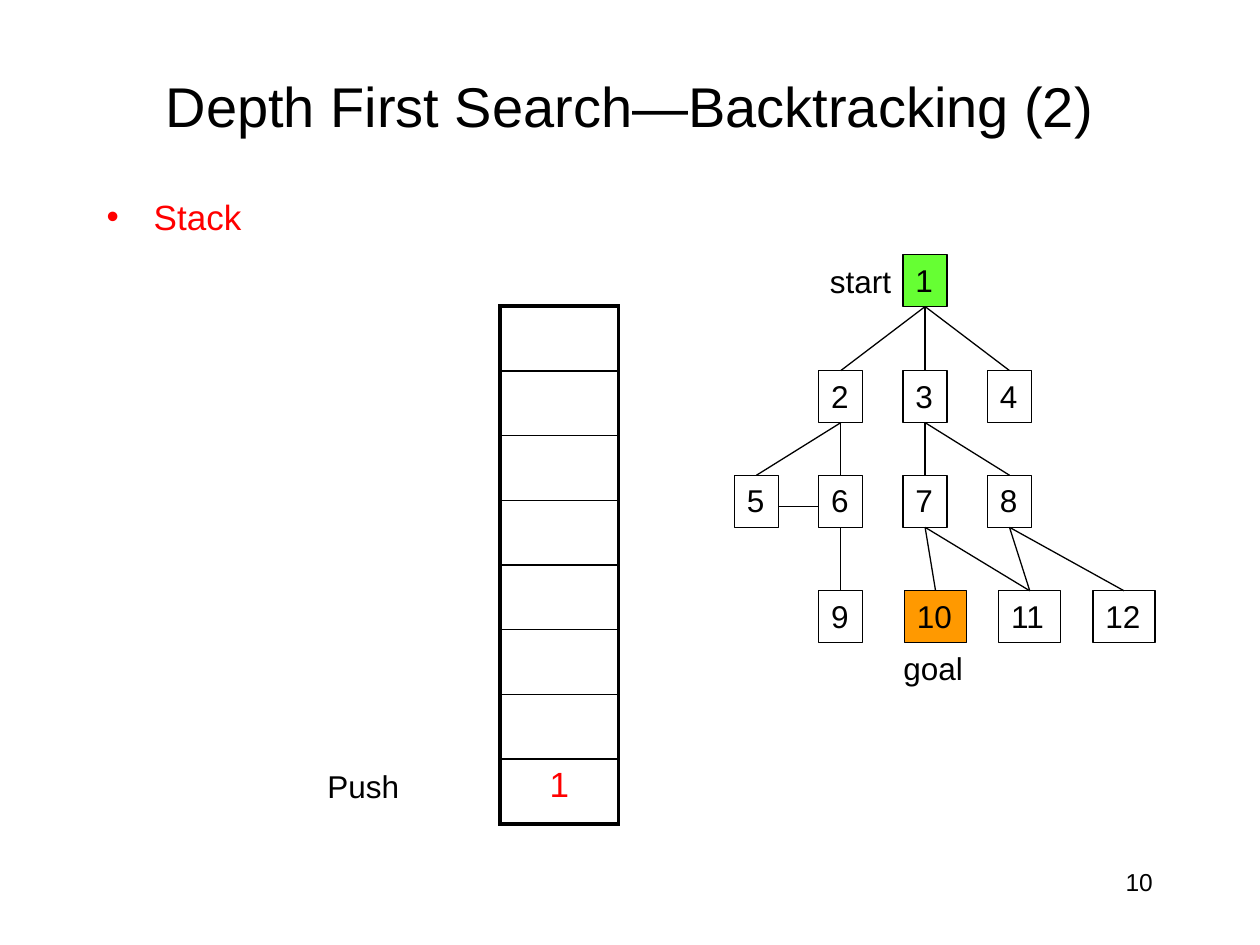
from lxml import etree
from pptx import Presentation
from pptx import util as u
from pptx.dml import color
from pptx.enum import shapes, text
from pptx.oxml import ns

COLORS = {
    "black": "000000",
    "red": "FF0000",
    "start": "66FF33",
    "goal": "FF9900",
}
FONT = "Arial"
NODE_HEIGHT = 1.05
COLUMNS = [15.25 + 1.7 * i for i in range(4)]
LEAVES = [18.86 + 1.9 * i for i in range(3)]
LEVELS = [5.13, 7.47, 9.58, 11.91]
NODES = {
    1: (COLUMNS[2], 0),
    2: (COLUMNS[1], 1),
    3: (COLUMNS[2], 1),
    4: (COLUMNS[3], 1),
    5: (COLUMNS[0], 2),
    6: (COLUMNS[1], 2),
    7: (COLUMNS[2], 2),
    8: (COLUMNS[3], 2),
    9: (COLUMNS[1], 3),
    10: (LEAVES[0], 3),
    11: (LEAVES[1], 3),
    12: (LEAVES[2], 3),
}
EDGES = [(1, 2), (1, 3), (1, 4), (2, 5), (2, 6), (3, 7), (3, 8),
         (6, 9), (7, 10), (7, 11), (8, 11), (8, 12)]
STACK_SIZE = 8


def rgb(name):
    return color.RGBColor.from_string(COLORS[name])


def write(paragraph, words, size, ink="black", align=text.PP_ALIGN.LEFT):
    paragraph.alignment = align
    run = paragraph.add_run()
    run.text = words
    run.font.name = FONT
    run.font.size = u.Pt(size)
    run.font.color.rgb = rgb(ink)


def add_label(slide, words, box, size=18, ink="black",
              align=text.PP_ALIGN.LEFT, anchor=text.MSO_ANCHOR.TOP, wrap=False):
    label = slide.shapes.add_textbox(*map(u.Cm, box))
    frame = label.text_frame
    frame.word_wrap = wrap
    frame.vertical_anchor = anchor
    write(frame.paragraphs[0], words, size, ink, align)
    return frame.paragraphs[0]


def add_bullet(paragraph, indent):
    paragraph.space_before = u.Pt(4)
    props = paragraph._p.get_or_add_pPr()
    props.set("marL", str(u.Cm(indent)))
    props.set("indent", str(-u.Cm(indent)))
    etree.SubElement(props, ns.qn("a:buFont"), typeface=FONT)
    etree.SubElement(props, ns.qn("a:buChar"), char="•")


def node_width(number):
    return 0.89 if number < 10 else 1.25


def add_node(slide, number, fill=None):
    center, level = NODES[number]
    width = node_width(number)
    node = slide.shapes.add_shape(
        shapes.MSO_SHAPE.RECTANGLE, u.Cm(center - width / 2),
        u.Cm(LEVELS[level]), u.Cm(width), u.Cm(NODE_HEIGHT))
    node.shadow.inherit = False
    if fill:
        node.fill.solid()
        node.fill.fore_color.rgb = rgb(fill)
    else:
        node.fill.background()
    node.line.color.rgb = rgb("black")
    node.line.width = u.Pt(0.75)
    frame = node.text_frame
    frame.word_wrap = False
    frame.vertical_anchor = text.MSO_ANCHOR.TOP
    write(frame.paragraphs[0], str(number), 18)


def add_edge(slide, start, end):
    edge = slide.shapes.add_connector(
        shapes.MSO_CONNECTOR.STRAIGHT, *map(u.Cm, (*start, *end)))
    edge.line.color.rgb = rgb("black")
    edge.line.width = u.Pt(0.75)
    etree.SubElement(edge._element.spPr, ns.qn("a:effectLst"))


def add_tree(slide):
    for number in NODES:
        add_node(slide, number, {1: "start", 10: "goal"}.get(number))
    for parent, child in EDGES:
        parent_x, parent_level = NODES[parent]
        child_x, child_level = NODES[child]
        add_edge(slide, (parent_x, LEVELS[parent_level] + NODE_HEIGHT),
                 (child_x, LEVELS[child_level]))
    sibling_y = LEVELS[2] + 0.63
    add_edge(slide, (NODES[5][0] + node_width(5) / 2, sibling_y),
             (NODES[6][0] - node_width(6) / 2, sibling_y))


def set_borders(cell, widths):
    props = cell._tc.get_or_add_tcPr()
    for position, (side, width) in enumerate(widths.items()):
        border = etree.Element(ns.qn(f"a:ln{side}"), w=str(u.Pt(width)))
        fill = etree.SubElement(border, ns.qn("a:solidFill"))
        etree.SubElement(fill, ns.qn("a:srgbClr"), val=COLORS["black"])
        props.insert(position, border)


def add_stack(slide, values):
    row_height = u.Cm(1.305)
    frame = slide.shapes.add_table(STACK_SIZE, 1, u.Cm(10.08), u.Cm(6.17),
                                   u.Cm(2.39), row_height * STACK_SIZE)
    stack = frame.table
    stack.first_row = stack.horz_banding = False
    for index in range(STACK_SIZE):
        stack.rows[index].height = row_height
        slot = stack.cell(index, 0)
        slot.fill.background()
        set_borders(slot, {
            "L": 2.25,
            "R": 2.25,
            "T": 2.25 if index == 0 else 1,
            "B": 2.25 if index == STACK_SIZE - 1 else 1,
        })
    for depth, value in enumerate(values, start=1):
        paragraph = stack.cell(STACK_SIZE - depth, 0).text_frame.paragraphs[0]
        paragraph.space_before = u.Pt(4)
        write(paragraph, value, 20, "red", text.PP_ALIGN.CENTER)


def main():
    deck = Presentation()
    deck.slide_width, deck.slide_height = u.Cm(25.4), u.Cm(19.05)
    slide = deck.slides.add_slide(deck.slide_layouts[6])
    add_label(slide, "10", (18.21, 17.35, 5.28, 1.27), 14,
              align=text.PP_ALIGN.RIGHT, wrap=True)
    add_label(slide, "Depth First Search—Backtracking (2)",
              (1.9, 1.07, 21.6, 2.1), 32, align=text.PP_ALIGN.CENTER,
              anchor=text.MSO_ANCHOR.MIDDLE, wrap=True)
    heading = add_label(slide, "Stack", (1.9, 3.81, 10.6, 13.13), 20, "red",
                        wrap=True)
    add_bullet(heading, 0.95)
    add_tree(slide)
    add_label(slide, "start", (16.48, 5.16, 1.75, 1.02))
    add_label(slide, "goal", (17.96, 12.95, 1.7, 1.02))
    add_stack(slide, ["1"])
    add_label(slide, "Push", (6.35, 15.34, 1.96, 1.02))
    deck.save("out.pptx")


if __name__ == "__main__":
    main()
